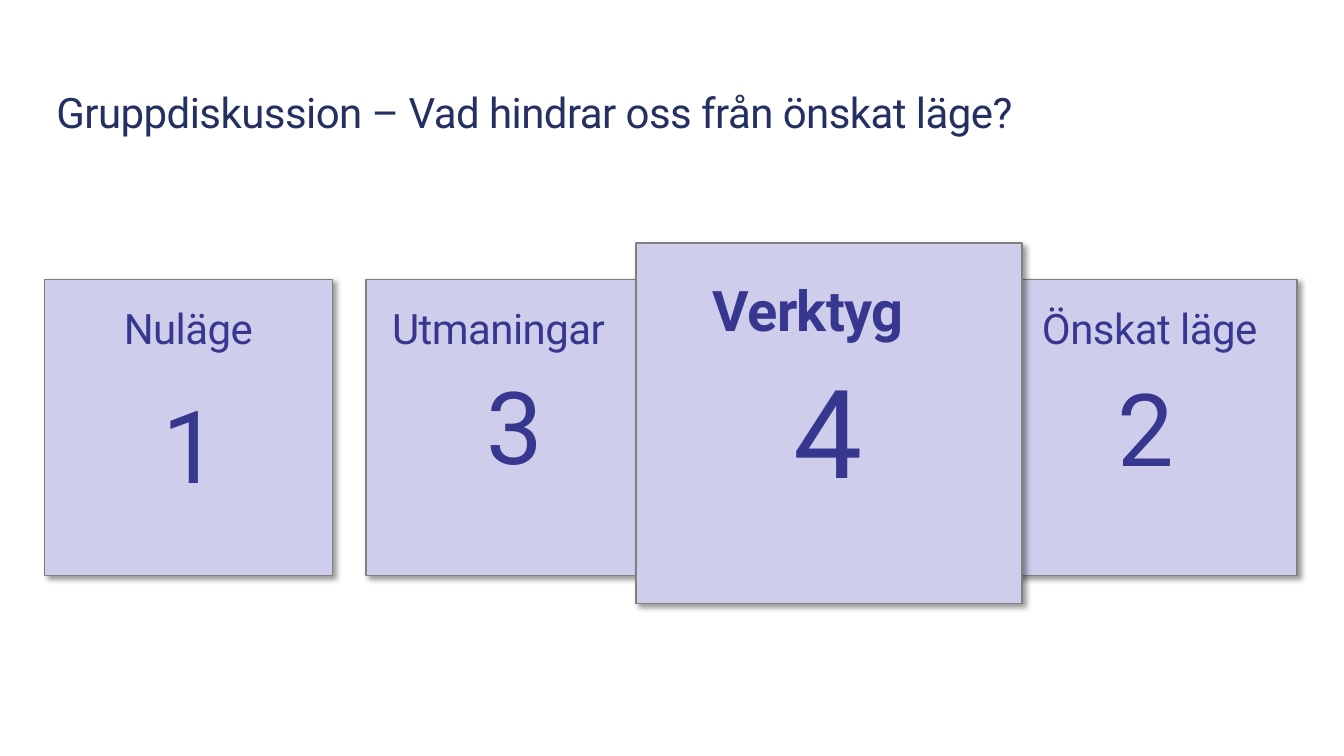
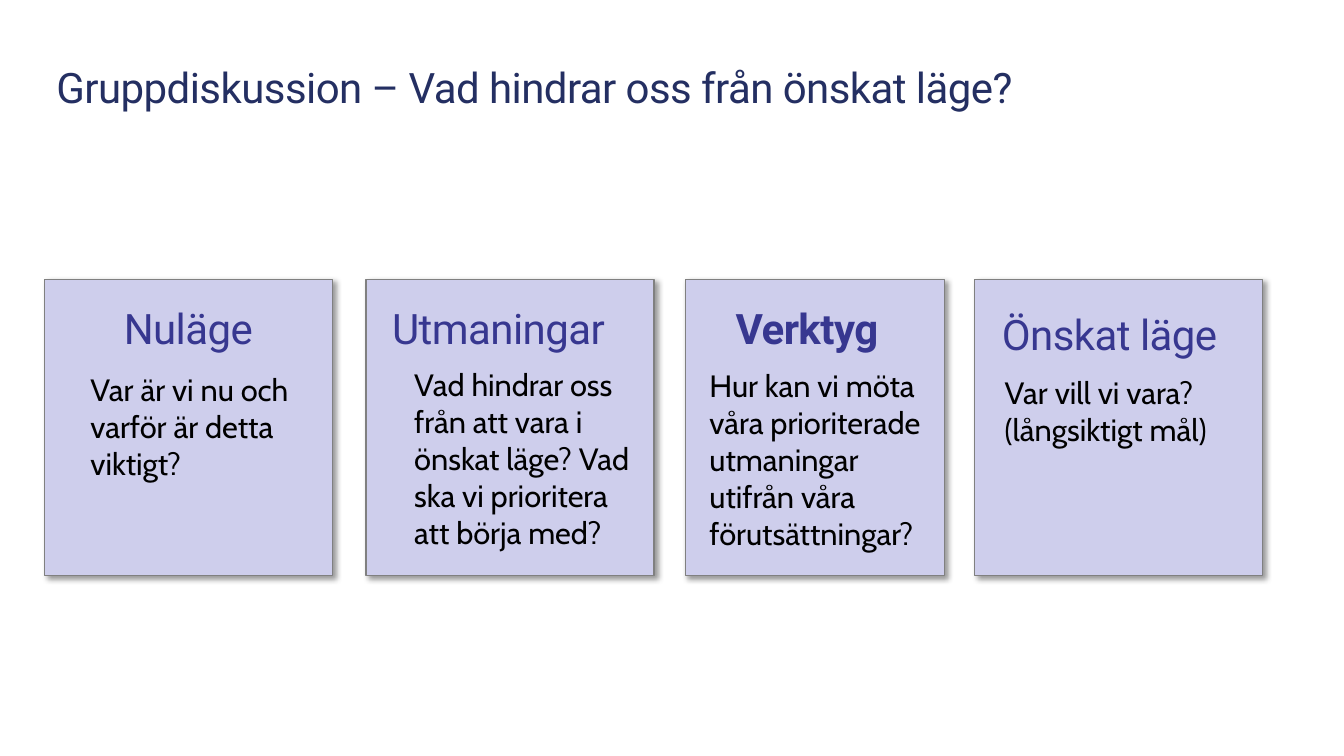
"""Build two slides on a group discussion about the way to a desired state."""
import pptx
import pptx.dml.color
import pptx.enum.shapes
import pptx.enum.text
import pptx.oxml
import pptx.util
from pptx.util import Cm

NAVY = pptx.dml.color.RGBColor(0x24, 0x2F, 0x62)
INDIGO = pptx.dml.color.RGBColor(0x37, 0x37, 0x90)
LAVENDER = pptx.dml.color.RGBColor(0xCE, 0xCE, 0xEC)
GREY = pptx.dml.color.RGBColor(0x80, 0x80, 0x80)
BLACK = pptx.dml.color.RGBColor(0, 0, 0)

TITLE = "Gruppdiskussion – Vad hindrar oss från önskat läge?"
CARD_TOP, CARD_WIDTH, CARD_HEIGHT = 7.04, 7.26, 7.47
HEADING_HEIGHT = 2.18
SHADOW = (
    '<a:effectLst xmlns:a="http://schemas.openxmlformats.org/drawingml/2006/main">'
    '<a:outerShdw blurRad="50800" dist="38100" dir="2700000" algn="tl" rotWithShape="0">'
    '<a:srgbClr val="000000"><a:alpha val="40000"/></a:srgbClr>'
    '</a:outerShdw></a:effectLst>'
)


def write_text(box, text, font_name, size, color, bold=False):
    """Fill a text shape with one left-aligned paragraph."""
    box.text_frame.word_wrap = True
    para = box.text_frame.paragraphs[0]
    para.text = text
    para.alignment = pptx.enum.text.PP_ALIGN.LEFT
    para.font.name = font_name
    para.font.size = pptx.util.Pt(size)
    para.font.color.rgb = color
    para.font.bold = bold
    return para


def write_heading(box, text, size, color, bold=False):
    """Write tightly set, vertically centred text without insets."""
    para = write_text(box, text, "Roboto", size, color, bold)
    para.line_spacing = 0.9
    para.runs[0]._r.get_or_add_rPr().set("spc", "-40")
    frame = box.text_frame
    frame.auto_size = pptx.enum.text.MSO_AUTO_SIZE.NONE
    frame.vertical_anchor = pptx.enum.text.MSO_ANCHOR.MIDDLE
    frame.margin_left = frame.margin_right = frame.margin_top = frame.margin_bottom = 0


plain_card = (CARD_TOP, CARD_WIDTH, CARD_HEIGHT)
now_card = (1.12, *plain_card)
challenge_card = (9.22, *plain_card)
now_heading = ("Nuläge", 3.12, 7.26, 4.29, 30, False)
challenge_heading = ("Utmaningar", 9.88, 7.26, 6.58, 30, False)

number_columns = [
    (now_card, now_heading, ("1", 3.84, 9.53, 2.31, 3.33, "Roboto", 72, INDIGO)),
    (challenge_card, challenge_heading,
     ("3", 12.01, 9.04, 2.31, 3.33, "Roboto", 72, INDIGO)),
    ((25.43, *plain_card), ("Önskat läge", 26.26, 7.24, 5.92, 30, False),
     ("2", 27.91, 9.09, 2.31, 3.33, "Roboto", 72, INDIGO)),
    ((16.03, 6.12, 9.73, 9.09), ("Verktyg", 17.96, 6.81, 8.28, 40, True),
     ("4", 19.76, 8.84, 2.31, 4.01, "Roboto", 88, INDIGO)),
]
question_columns = [
    (now_card, now_heading,
     ("Var är vi nu och varför är detta viktigt?",
      2.03, 9.22, 6.07, 3.07, "Cabin", 22, BLACK)),
    (challenge_card, challenge_heading,
     ("Vad hindrar oss från att vara i önskat läge? Vad ska vi prioritera att börja med?",
      10.19, 9.09, 6.27, 4.95, "Cabin", 22, BLACK)),
    ((17.27, CARD_TOP, 6.53, CARD_HEIGHT), ("Verktyg", 18.54, 7.24, 8.28, 30, True),
     ("Hur kan vi möta våra prioriterade utmaningar utifrån våra förutsättningar?",
      17.63, 9.12, 6.27, 4.95, "Cabin", 22, BLACK)),
    ((24.56, *plain_card), ("Önskat läge", 25.25, 7.39, 5.92, 30, False),
     ("Var vill vi vara? (långsiktigt mål)",
      25.07, 9.3, 6.07, 2.13, "Cabin", 22, BLACK)),
]

deck = pptx.Presentation()
deck.slide_width = Cm(33.87)
deck.slide_height = Cm(19.05)

for title_height, columns in ((2.79, number_columns), (1.52, question_columns)):
    page = deck.slides.add_slide(deck.slide_layouts[5])
    title = page.shapes.title
    title.left, title.top = Cm(1.42), Cm(1.5)
    title.width, title.height = Cm(30.99), Cm(title_height)
    write_heading(title, TITLE, 30, NAVY)

    for card_place, heading, content in columns:
        card = page.shapes.add_shape(
            pptx.enum.shapes.MSO_SHAPE.RECTANGLE, *map(Cm, card_place))
        card.fill.solid()
        card.fill.fore_color.rgb = LAVENDER
        card.line.color.rgb = GREY
        card.line.width = pptx.util.Pt(1)
        card._element.spPr.append(pptx.oxml.parse_xml(SHADOW))

        text, left, top, width, size, bold = heading
        heading_box = page.shapes.add_textbox(
            Cm(left), Cm(top), Cm(width), Cm(HEADING_HEIGHT))
        write_heading(heading_box, text, size, INDIGO, bold)

        text, left, top, width, height, font_name, size, color = content
        content_box = page.shapes.add_textbox(Cm(left), Cm(top), Cm(width), Cm(height))
        write_text(content_box, text, font_name, size, color)
        content_box.text_frame.auto_size = pptx.enum.text.MSO_AUTO_SIZE.SHAPE_TO_FIT_TEXT

deck.save("out.pptx")
